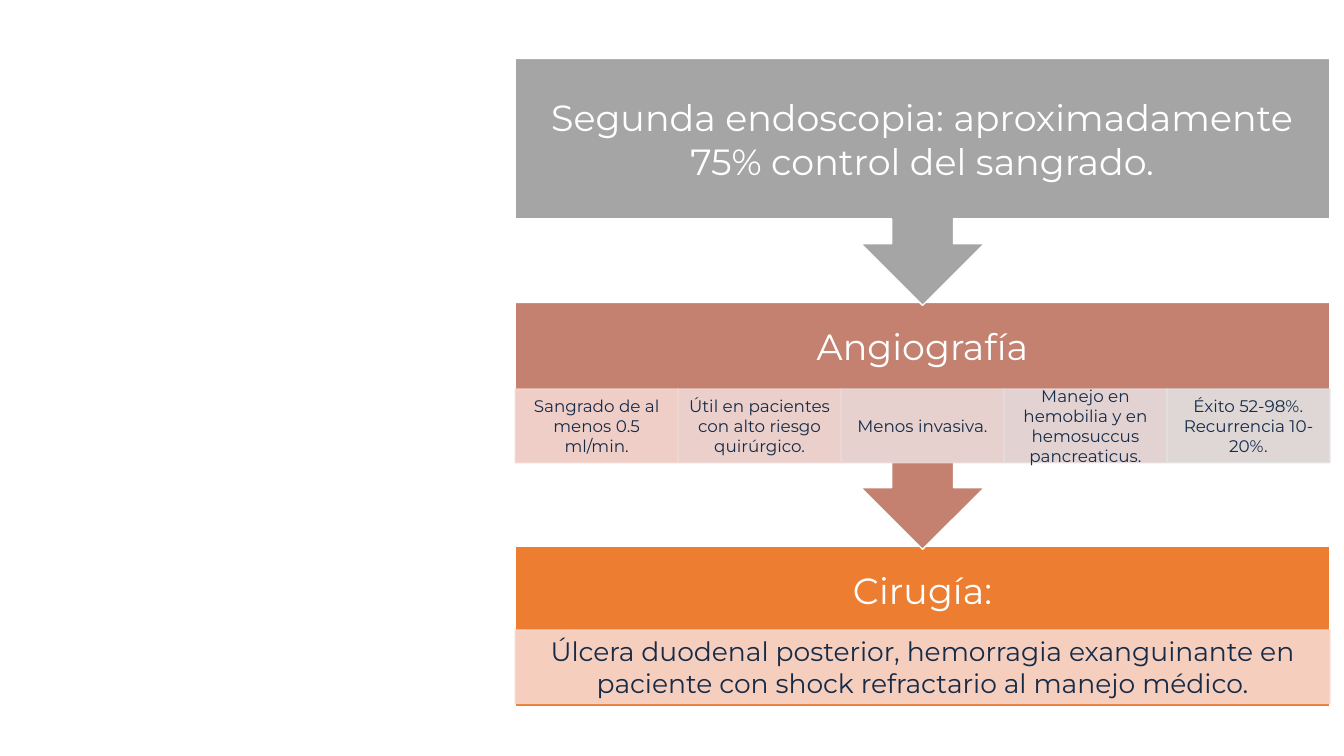
from dataclasses import dataclass

from lxml import etree
from pptx import Presentation
from pptx import util as u
from pptx.dml.color import RGBColor
from pptx.enum import shapes, text
from pptx.oxml import ns
from pptx.shapes.autoshape import Shape
from pptx.slide import Slide


@dataclass(frozen=True)
class Theme:
    """Fonts, type sizes and colours of the slide."""

    font: str = "Montserrat"
    title_size: int = 26
    detail_size: int = 19
    cell_size: int = 12
    light: str = "FFFFFF"
    dark: str = "152B48"
    gray: str = "A5A5A5"
    red: str = "C48170"
    orange: str = "ED7D31"
    peach: str = "F8D7CE"
    cell_fills: tuple[str, ...] = ("F4D7D1", "EFD8D5", "EADAD9", "E6DDDD", "E1E1E1")
    cell_opacity: int = 90


@dataclass(frozen=True)
class Box:
    """Position and size in inches."""

    left: float
    top: float
    width: float
    height: float

    def lengths(self) -> list[u.Length]:
        """Return left, top, width and height as slide lengths."""
        return [u.Inches(n) for n in (self.left, self.top, self.width, self.height)]


@dataclass(frozen=True)
class Detail:
    """A row of tinted cells under a step title."""

    top: float
    texts: tuple[str, ...]
    fills: tuple[str, ...]
    size: int
    margin_x: float
    margin_y: float


@dataclass(frozen=True)
class Step:
    """One stage of the treatment flow."""

    title: str
    top: float
    height: float
    title_height: float
    fill: str
    has_arrow: bool
    detail: Detail | None = None


THEME = Theme()
LEFT, WIDTH = 5.11, 8.08
DETAIL_HEIGHT = 0.73
TITLE_MARGIN = 0.2

STEPS = (
    Step("Cirugía:", 5.42, 1.59, 0.86, THEME.orange, False, Detail(
        6.25,
        ("Úlcera duodenal posterior, hemorragia exanguinante en paciente con "
         "shock refractario al manejo médico.",),
        (THEME.peach,), THEME.detail_size, 0.15, 0.03)),
    Step("Angiografía", 3, 2.45, 0.86, THEME.red, True, Detail(
        3.86,
        ("Sangrado de al menos 0.5 ml/min.",
         "Útil en pacientes con alto riesgo quirúrgico.",
         "Menos invasiva.",
         "Manejo en hemobilia y en hemosuccus pancreaticus.",
         "Éxito 52-98%. Recurrencia 10-20%."),
        THEME.cell_fills, THEME.cell_size, 0.09, 0.02)),
    Step("Segunda endoscopia: aproximadamente 75% control del sangrado.",
         0.58, 2.45, 1.59, THEME.gray, True),
)


def write_text(shape: Shape, content: str, size: int, color: str,
               margin_x: float, margin_y: float) -> None:
    """Fill a shape with one centred paragraph."""
    frame = shape.text_frame
    frame_format = {
        "word_wrap": True,
        "auto_size": text.MSO_AUTO_SIZE.NONE,
        "vertical_anchor": text.MSO_ANCHOR.MIDDLE,
        "margin_left": u.Inches(margin_x),
        "margin_right": u.Inches(margin_x),
        "margin_top": u.Inches(margin_y),
        "margin_bottom": u.Inches(margin_y),
    }
    for name, value in frame_format.items():
        setattr(frame, name, value)
    paragraph = frame.paragraphs[0]
    paragraph.alignment = text.PP_ALIGN.CENTER
    run = paragraph.add_run()
    run.text = content
    for name, value in {"name": THEME.font, "size": u.Pt(size)}.items():
        setattr(run.font, name, value)
    run.font.color.rgb = RGBColor.from_string(color)


def add_block(slide: Slide, kind: shapes.MSO_SHAPE, box: Box, fill: str,
              line: str, opacity: int = 100) -> Shape:
    """Add a flat outlined shape, optionally translucent."""
    shape = slide.shapes.add_shape(kind, *box.lengths())
    shape.shadow.inherit = False
    shape.fill.solid()
    shape.fill.fore_color.rgb = RGBColor.from_string(fill)
    shape.line.color.rgb = RGBColor.from_string(line)
    shape.line.width = u.Pt(1)
    if opacity < 100:
        for color in shape.element.spPr.iter(ns.qn("a:srgbClr")):
            etree.SubElement(color, ns.qn("a:alpha"), val=str(opacity * 1000))
    return shape


def add_detail(slide: Slide, detail: Detail) -> None:
    """Share the step width evenly among the detail cells."""
    width = WIDTH / len(detail.texts)
    for index, (content, fill) in enumerate(zip(detail.texts, detail.fills)):
        box = Box(LEFT + index * width, detail.top, width, DETAIL_HEIGHT)
        cell = add_block(slide, shapes.MSO_SHAPE.RECTANGLE, box, fill, fill,
                         THEME.cell_opacity)
        write_text(cell, content, detail.size, THEME.dark,
                   detail.margin_x, detail.margin_y)


def add_step(slide: Slide, step: Step) -> None:
    """Draw a step block, its title and its detail row."""
    kind = (shapes.MSO_SHAPE.UP_ARROW_CALLOUT if step.has_arrow
            else shapes.MSO_SHAPE.RECTANGLE)
    block = add_block(slide, kind, Box(LEFT, step.top, WIDTH, step.height),
                      step.fill, THEME.light)
    if step.has_arrow:
        block.rotation = 180
    title_box = Box(LEFT, step.top, WIDTH, step.title_height)
    title = slide.shapes.add_textbox(*title_box.lengths())
    write_text(title, step.title, THEME.title_size, THEME.light,
               TITLE_MARGIN, TITLE_MARGIN)
    if step.detail:
        add_detail(slide, step.detail)


def main() -> None:
    """Build and save the treatment flow slide."""
    presentation = Presentation()
    presentation.slide_width = u.Inches(13.33)
    presentation.slide_height = u.Inches(7.5)
    slide = presentation.slides.add_slide(presentation.slide_layouts[6])
    for step in STEPS:
        add_step(slide, step)
    presentation.save("out.pptx")


if __name__ == "__main__":
    main()
